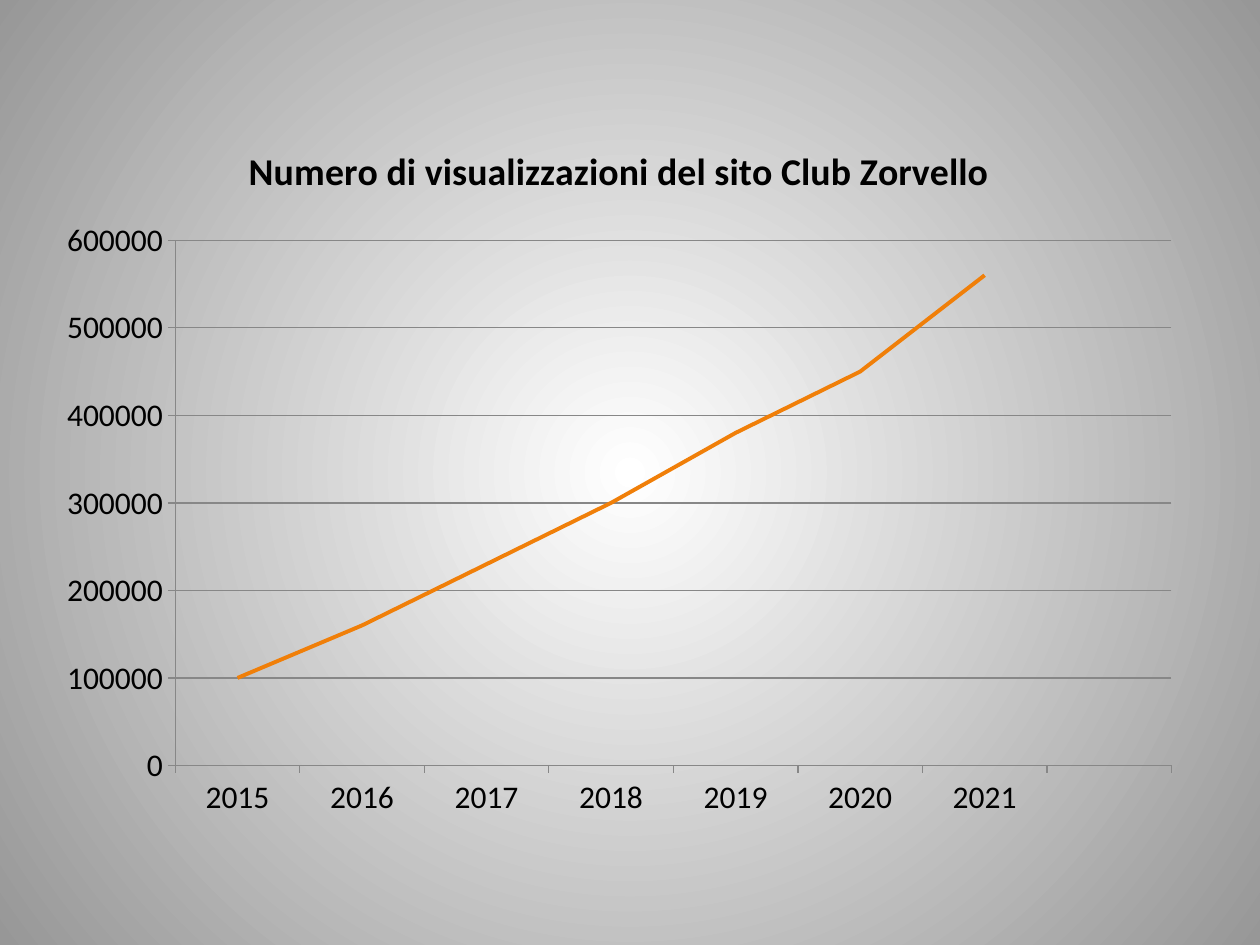
from lxml import etree
from pptx import Presentation
from pptx.chart.data import CategoryChartData
from pptx.dml.color import RGBColor
from pptx.enum.chart import XL_CHART_TYPE as ChartType, XL_TICK_MARK as Tick
from pptx.oxml.ns import qn
from pptx.util import Inches, Pt


def color(value):
    return RGBColor.from_string(value)


TITLE = "Numero di visualizzazioni del sito Club Zorvello"
VIEWS = {
    "2015": 100000, "2016": 160000, "2017": 230000, "2018": 300000,
    "2019": 380000, "2020": 450000, "2021": 560000, "": None,
}

deck = Presentation()
deck.slide_width, deck.slide_height = Inches(10), Inches(7.5)
page = deck.slides.add_slide(deck.slide_layouts[6])

# Background: white centre fading to grey in circles
fill = page.background.fill
fill.gradient()
for stop, shade in zip(fill.gradient_stops, ("FFFFFF", "979797")):
    stop.color.rgb = color(shade)
linear = next(page.background._cSld.iter(qn("a:lin")))
circle = etree.Element(qn("a:path"), {"path": "circle"})
etree.SubElement(circle, qn("a:fillToRect"), {side: "50000" for side in "ltrb"})
linear.getparent().replace(linear, circle)

# Line chart of views per year
data = CategoryChartData(number_format="General")
data.categories = list(VIEWS)
data.add_series(TITLE, list(VIEWS.values()))
chart = page.shapes.add_chart(
    ChartType.LINE, Inches(0.35), Inches(0.92), Inches(9.13), Inches(5.67), data
).chart
chart.has_legend = False
chart.font.name = "Calibri"
chart.font.size = Pt(18)
chart.font.color.rgb = color("000000")

# Title
chart.has_title = True
chart.chart_title.include_in_layout = False
title_frame = chart.chart_title.text_frame
title_frame.text = TITLE
title_font = title_frame.paragraphs[0].runs[0].font
title_font.name = "Calibri"
title_font.size = Pt(21.6)
title_font.bold = True
title_font.color.rgb = color("000000")

# Axes and gridlines
values = chart.value_axis
values.minimum_scale, values.maximum_scale, values.major_unit = 0, 600000, 100000
values.has_major_gridlines = True
for axis in (chart.category_axis, values):
    axis.major_tick_mark = Tick.OUTSIDE
    axis.minor_tick_mark = Tick.NONE
for line in (chart.category_axis.format.line, values.format.line,
             values.major_gridlines.format.line):
    line.color.rgb = color("878787")
    line.width = Pt(0.75)

# Series
chart.plots[0].vary_by_categories = False
views = chart.plots[0].series[0]
views.smooth = False
views.format.line.color.rgb = color("F07F09")
views.format.line.width = Pt(2.25)

deck.save("out.pptx")
